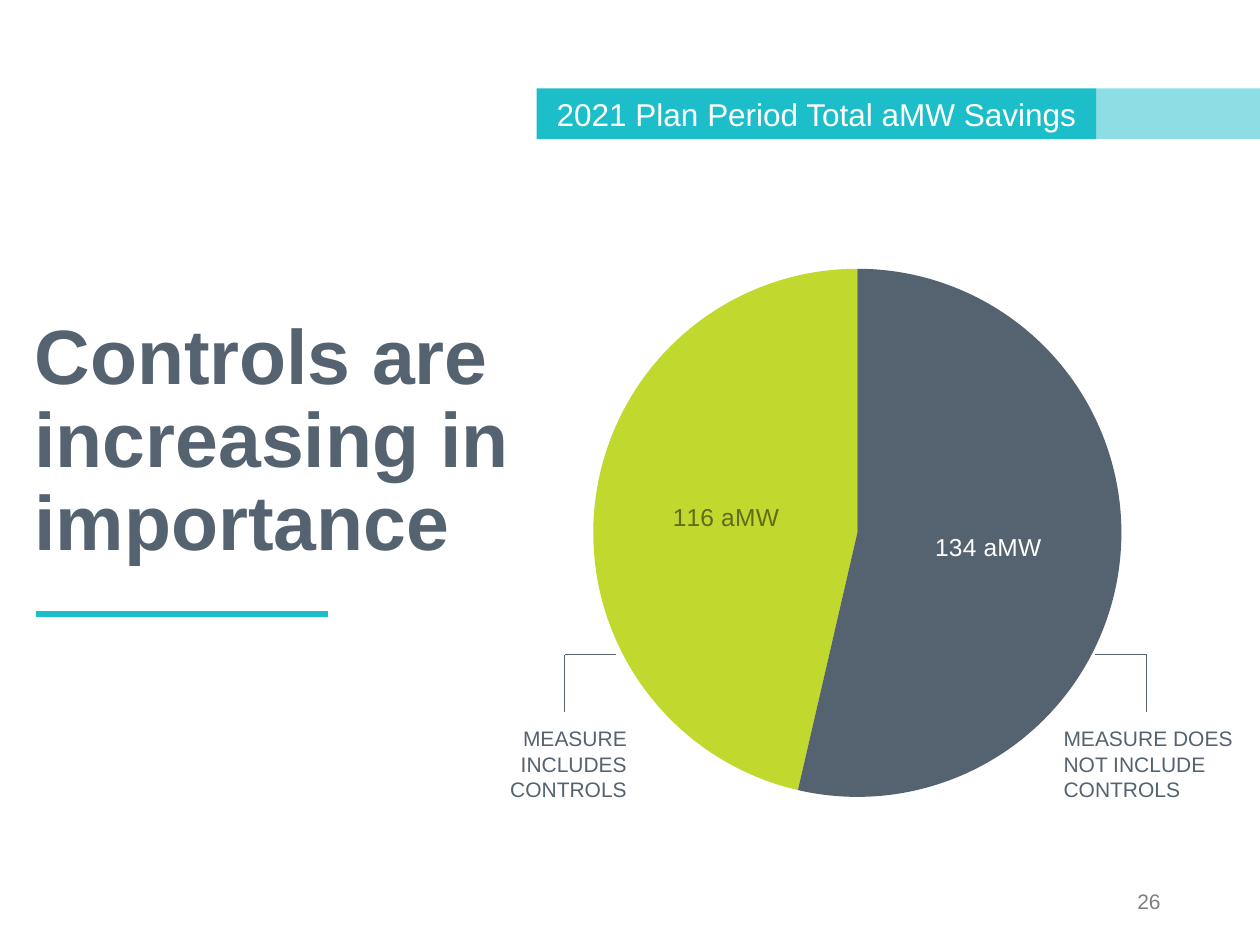
"""Build the slide on controls savings with a two-slice pie chart."""
from dataclasses import dataclass

from lxml import etree
from pptx import Presentation
from pptx import util as u
from pptx.chart.data import CategoryChartData
from pptx.dml.color import RGBColor
from pptx.enum import chart as charts
from pptx.enum import shapes, text
from pptx.oxml import parse_xml
from pptx.oxml.ns import nsdecls, qn

Pt = u.Pt
Align = text.PP_ALIGN
Anchor = text.MSO_ANCHOR


@dataclass(frozen=True)
class Theme:
    font: str = "Arial"
    teal: str = "1CBECA"
    slate: str = "556270"
    lime: str = "C1D82F"
    olive: str = "606C17"
    grey: str = "808080"
    white: str = "FFFFFF"
    title_size: float = 44
    banner_size: float = 18
    value_size: float = 14
    note_size: float = 12


THEME = Theme()


@dataclass(frozen=True)
class Box:
    left: float
    top: float
    width: float
    height: float

    def lengths(self):
        return [Pt(v) for v in (self.left, self.top, self.width, self.height)]


@dataclass(frozen=True)
class Note:
    words: str
    box: Box
    align: Align
    color: str = THEME.slate
    anchor: Anchor = Anchor.TOP


@dataclass(frozen=True)
class Callout:
    inner_x: float
    outer_x: float
    top: float = 374.1
    bottom: float = 406.8


@dataclass(frozen=True)
class Slice:
    name: str
    value: int
    fill: str
    label_color: str


NOTES = [
    Note("MEASURE INCLUDES CONTROLS", Box(280.3, 411.3, 85, 51.1), Align.RIGHT),
    Note("MEASURE DOES NOT INCLUDE CONTROLS", Box(600.7, 411.3, 113, 51.1), Align.LEFT),
    Note("26", Box(508.3, 500.4, 162, 28.8), Align.RIGHT, THEME.grey, Anchor.MIDDLE),
]
CALLOUTS = [Callout(352.1, 322.6), Callout(625.7, 655.2)]
SLICES = [
    Slice("1", 116, THEME.lime, THEME.olive),
    Slice("2", 134, THEME.slate, THEME.white),
]


def style_font(font, size: float, color: str, bold: bool = False) -> None:
    font.name, font.size, font.bold = THEME.font, Pt(size), bold
    font.color.rgb = RGBColor.from_string(color)


def write(shape, words: str, size: float, color: str, align: Align,
          anchor: Anchor, bold: bool = False):
    frame = shape.text_frame
    frame.text = words
    frame.word_wrap = True
    frame.auto_size = text.MSO_AUTO_SIZE.NONE
    frame.vertical_anchor = anchor
    paragraph = frame.paragraphs[0]
    paragraph.alignment = align
    style_font(paragraph.runs[0].font, size, color, bold)
    return paragraph


def add_title(slide, words: str, box: Box) -> None:
    title = slide.shapes.title
    title.left, title.top, title.width, title.height = box.lengths()
    paragraph = write(title, words, THEME.title_size, THEME.slate,
                      Align.LEFT, Anchor.MIDDLE, bold=True)
    paragraph.line_spacing = 0.9
    paragraph.runs[0].font._element.set("kern", "0")


def add_bar(slide, box: Box, alpha: int = 100):
    bar = slide.shapes.add_shape(shapes.MSO_SHAPE.RECTANGLE, *box.lengths())
    bar.shadow.inherit = False
    bar.fill.solid()
    bar.fill.fore_color.rgb = RGBColor.from_string(THEME.teal)
    bar.line.fill.background()
    if alpha < 100:
        color = bar.fill._xPr.find(f".//{qn('a:srgbClr')}")
        etree.SubElement(color, qn("a:alpha")).set("val", str(alpha * 1000))
    return bar


def add_line(slide, x1: float, y1: float, x2: float, y2: float,
             color: str, width: float) -> None:
    line = slide.shapes.add_connector(
        shapes.MSO_CONNECTOR.STRAIGHT, Pt(x1), Pt(y1), Pt(x2), Pt(y2))
    line.line.color.rgb = RGBColor.from_string(color)
    line.line.width = Pt(width)
    etree.SubElement(line._element.spPr, qn("a:effectLst"))


def add_callout(slide, callout: Callout) -> None:
    add_line(slide, callout.outer_x, callout.bottom, callout.outer_x, callout.top,
             THEME.slate, 0.5)
    add_line(slide, callout.inner_x, callout.top, callout.outer_x, callout.top,
             THEME.slate, 0.5)


def add_note(slide, note: Note) -> None:
    shape = slide.shapes.add_textbox(*note.box.lengths())
    write(shape, note.words, THEME.note_size, note.color, note.align, note.anchor)


def add_pie(slide, box: Box, slices: list[Slice], start_angle: int) -> None:
    data = CategoryChartData()
    data.categories = [part.name for part in slices]
    data.add_series("Series 1", [part.value for part in slices])
    chart = slide.shapes.add_chart(
        charts.XL_CHART_TYPE.PIE, *box.lengths(), data).chart
    chart.has_legend = False
    chart.has_title = False
    style_font(chart.font, 10, "000000")
    plot = chart.plots[0]
    plot.vary_by_categories = True
    labels = plot.series[0].data_labels
    labels.show_value = True
    labels.show_percentage = False
    labels.position = charts.XL_LABEL_POSITION.CENTER
    style_font(labels.font, THEME.value_size, THEME.white, bold=True)
    for index, part in enumerate(slices):
        point = plot.series[0].points[index]
        point.format.fill.solid()
        point.format.fill.fore_color.rgb = RGBColor.from_string(part.fill)
        point.format.line.fill.background()
        label = point.data_label
        label.text_frame.text = f"{part.value} aMW"
        style_font(label.text_frame.paragraphs[0].runs[0].font,
                   THEME.value_size, part.label_color)
        label.position = charts.XL_LABEL_POSITION.CENTER
    pie = plot._element
    for old in pie.findall(qn("c:firstSliceAng")):
        pie.remove(old)
    etree.SubElement(pie, qn("c:firstSliceAng")).set("val", str(start_angle))
    area = pie.getparent()
    for old in area.findall(qn("c:layout")):
        area.remove(old)
    area.insert(0, parse_xml(
        f'<c:layout {nsdecls("c")}><c:manualLayout><c:layoutTarget val="inner"/>'
        '<c:xMode val="edge"/><c:yMode val="edge"/><c:x val="0.03"/>'
        '<c:y val="0.035"/><c:w val="0.94"/><c:h val="0.93"/>'
        '</c:manualLayout></c:layout>'))


def main() -> None:
    presentation = Presentation()
    presentation.slide_width, presentation.slide_height = Pt(720), Pt(540)
    slide = presentation.slides.add_slide(presentation.slide_layouts[5])
    add_bar(slide, Box(626.4, 50.6, 93.6, 28.8), alpha=50)
    add_pie(slide, Box(329.4, 142.2, 321.1, 324.7), SLICES, start_angle=193)
    banner = add_bar(slide, Box(306.7, 50.6, 319.7, 28.8))
    write(banner, "2021 Plan Period Total aMW Savings", THEME.banner_size,
          THEME.white, Align.CENTER, Anchor.MIDDLE)
    add_title(slide, "Controls are increasing in importance",
              Box(12.5, 113.3, 286.6, 279.4))
    add_line(slide, 20.4, 350.8, 187.2, 350.8, THEME.teal, 3)
    for note in NOTES:
        add_note(slide, note)
    for callout in CALLOUTS:
        add_callout(slide, callout)
    presentation.save("out.pptx")


if __name__ == "__main__":
    main()
